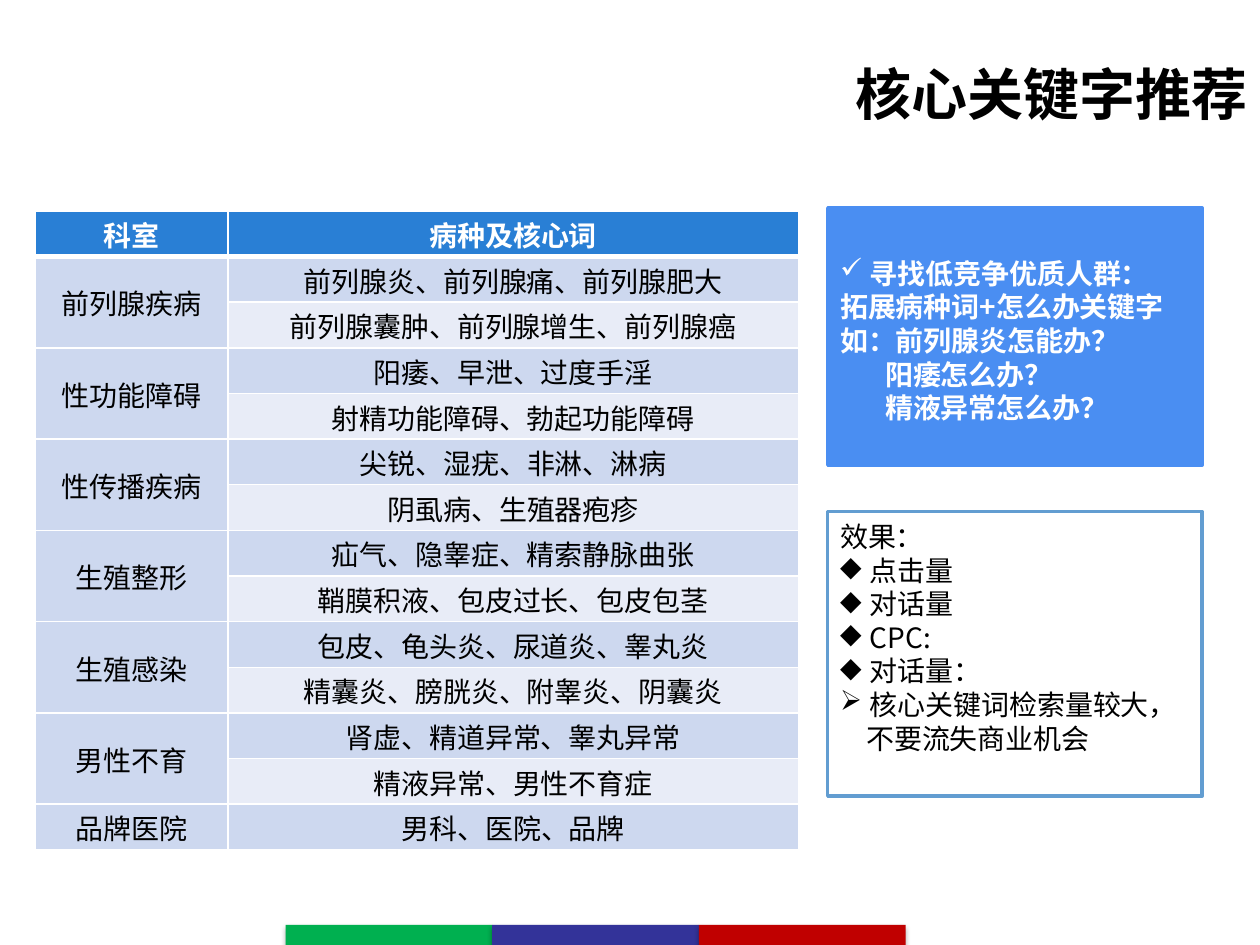
from dataclasses import dataclass

from lxml import etree
from pptx import Presentation
from pptx import util as u
from pptx.dml.color import RGBColor
from pptx.enum import shapes, text
from pptx.oxml import ns


@dataclass(frozen=True)
class Theme:
    font: str = "Noto Sans CJK SC"
    bullet_font: str = "OpenSymbol"
    title_size: float = 32
    body_size: float = 16
    line_pitch: float = 19.2
    black: str = "000000"
    white: str = "FFFFFF"
    header: str = "297FD5"
    band_dark: str = "CDD8EF"
    band_light: str = "E8ECF7"
    tip_fill: str = "4A8EF2"
    effect_line: str = "629DD1"
    stripes: tuple[str, ...] = ("00B050", "333399", "C00000")


@dataclass(frozen=True)
class Box:
    left: float
    top: float
    width: float
    height: float

    def lengths(self) -> list[u.Length]:
        return [u.Pt(value) for value in (self.left, self.top, self.width, self.height)]


@dataclass(frozen=True)
class Line:
    text: str
    bullet: str = ""
    indent: float = 0


@dataclass(frozen=True)
class Panel:
    box: Box
    fill: str
    outline: str
    color: str
    bold: bool
    anchor: text.MSO_ANCHOR
    top_inset: float
    lines: tuple[Line, ...]


@dataclass(frozen=True)
class Department:
    name: str
    keywords: tuple[str, ...]


THEME = Theme()
BULLET_INDENT = 17
TABLE_BOX = Box(20, 120.5, 436.4, 365.4)
COLUMN_WIDTHS = (110.2, 326.2)
HEADINGS = ("科室", "病种及核心词")
STRIPE = Box(163.2, 528.5, 118.1, 11.5)

DEPARTMENTS = (
    Department("前列腺疾病", ("前列腺炎、前列腺痛、前列腺肥大", "前列腺囊肿、前列腺增生、前列腺癌")),
    Department("性功能障碍", ("阳痿、早泄、过度手淫", "射精功能障碍、勃起功能障碍")),
    Department("性传播疾病", ("尖锐、湿疣、非淋、淋病", "阴虱病、生殖器疱疹")),
    Department("生殖整形", ("疝气、隐睾症、精索静脉曲张", "鞘膜积液、包皮过长、包皮包茎")),
    Department("生殖感染", ("包皮、龟头炎、尿道炎、睾丸炎", "精囊炎、膀胱炎、附睾炎、阴囊炎")),
    Department("男性不育", ("肾虚、精道异常、睾丸异常", "精液异常、男性不育症")),
    Department("品牌医院", ("男科、医院、品牌",)),
)

PANELS = (
    Panel(Box(473, 118.8, 214, 147), THEME.tip_fill, THEME.tip_fill, THEME.white, True,
          text.MSO_ANCHOR.MIDDLE, 8, (
              Line("寻找低竞争优质人群：", "✓", BULLET_INDENT),
              Line("拓展病种词+怎么办关键字"),
              Line("如：前列腺炎怎能办？"),
              Line("阳痿怎么办？", indent=25.7),
              Line("精液异常怎么办？", indent=25.7),
          )),
    Panel(Box(473, 292.4, 214, 162.6), THEME.white, THEME.effect_line, THEME.black, False,
          text.MSO_ANCHOR.TOP, 4.6, (
              Line("效果："),
              *(Line(metric, "◆", BULLET_INDENT) for metric in ("点击量", "对话量", "CPC:", "对话量：")),
              Line("核心关键词检索量较大，", "➢", BULLET_INDENT),
              Line("不要流失商业机会", indent=14.9),
          )),
)


def rgb(color: str) -> RGBColor:
    return RGBColor.from_string(color)


def add_element(parent, tag: str, **attributes):
    element = etree.SubElement(parent, ns.qn(tag))
    for name, value in attributes.items():
        element.set(name, str(value))
    return element


def format_runs(paragraph, size: float, color: str, bold: bool) -> None:
    for run in paragraph.runs:
        run.font.name = THEME.font
        run.font.size = u.Pt(size)
        run.font.bold = bold
        run.font.color.rgb = rgb(color)
        add_element(run.font._element, "a:ea", typeface=THEME.font)


def add_title(slide) -> None:
    shape = slide.shapes.add_textbox(*Box(99.4, 26, 620.6, 54).lengths())
    frame = shape.text_frame
    frame.word_wrap = True
    frame.vertical_anchor = text.MSO_ANCHOR.MIDDLE
    frame.text = "核心关键字推荐"
    paragraph = frame.paragraphs[0]
    paragraph.alignment = text.PP_ALIGN.RIGHT
    format_runs(paragraph, THEME.title_size, THEME.black, True)


def indent_paragraph(paragraph, line: Line) -> None:
    """Set the left indent and, for a bulleted line, the hanging bullet."""
    properties = paragraph._p.get_or_add_pPr()
    properties.set("marL", str(u.Pt(line.indent)))
    if line.bullet:
        properties.set("indent", str(-u.Pt(line.indent)))
        add_element(properties, "a:buFont", typeface=THEME.bullet_font)
        add_element(properties, "a:buChar", char=line.bullet)


def add_panel(slide, panel: Panel) -> None:
    shape = slide.shapes.add_shape(shapes.MSO_SHAPE.RECTANGLE, *panel.box.lengths())
    shape.shadow.inherit = False
    shape.fill.solid()
    shape.fill.fore_color.rgb = rgb(panel.fill)
    shape.line.color.rgb = rgb(panel.outline)
    shape.line.width = u.Pt(2)
    frame = shape.text_frame
    frame.word_wrap = True
    frame.vertical_anchor = panel.anchor
    frame.margin_top = u.Pt(panel.top_inset)
    frame.text = "\n".join(line.text for line in panel.lines)
    for paragraph, line in zip(frame.paragraphs, panel.lines):
        indent_paragraph(paragraph, line)
        paragraph.alignment = text.PP_ALIGN.LEFT
        paragraph.line_spacing = u.Pt(THEME.line_pitch)
        format_runs(paragraph, THEME.body_size, panel.color, panel.bold)


def set_borders(cell, bottom_width: float) -> None:
    properties = cell._tc.get_or_add_tcPr()
    widths = {"a:lnL": 1, "a:lnR": 1, "a:lnT": 1, "a:lnB": bottom_width}
    for position, (tag, width) in enumerate(widths.items()):
        border = add_element(properties, tag, w=u.Pt(width))
        add_element(add_element(border, "a:solidFill"), "a:srgbClr", val=THEME.white)
        properties.insert(position, border)


def fill_cell(cell, words: str, fill: str, header: bool = False) -> None:
    cell.fill.solid()
    cell.fill.fore_color.rgb = rgb(fill)
    set_borders(cell, 3 if header else 1)
    cell.vertical_anchor = text.MSO_ANCHOR.MIDDLE
    cell.margin_left = cell.margin_right = cell.margin_top = u.Pt(0.7)
    cell.margin_bottom = 0
    cell.text_frame.text = words
    paragraph = cell.text_frame.paragraphs[0]
    paragraph.alignment = text.PP_ALIGN.CENTER
    format_runs(paragraph, THEME.body_size, THEME.white if header else THEME.black, header)


def add_keyword_table(slide) -> None:
    row_count = 1 + sum(len(department.keywords) for department in DEPARTMENTS)
    table = slide.shapes.add_table(row_count, len(HEADINGS), *TABLE_BOX.lengths()).table
    for column, width in zip(table.columns, COLUMN_WIDTHS):
        column.width = u.Pt(width)
    for row in table.rows:
        row.height = u.Pt(TABLE_BOX.height / row_count)
    for column, heading in enumerate(HEADINGS):
        fill_cell(table.cell(0, column), heading, THEME.header, header=True)
    row = 1
    for department in DEPARTMENTS:
        last_row = row + len(department.keywords) - 1
        if last_row > row:
            table.cell(row, 0).merge(table.cell(last_row, 0))
        for offset, keywords in enumerate(department.keywords):
            fill_cell(table.cell(row + offset, 0), "" if offset else department.name, THEME.band_dark)
            fill_cell(table.cell(row + offset, 1), keywords,
                      THEME.band_light if offset else THEME.band_dark)
        row = last_row + 1


def add_footer_stripes(slide) -> None:
    group = slide.shapes.add_group_shape()
    for index, color in enumerate(THEME.stripes):
        box = Box(STRIPE.left + index * STRIPE.width, STRIPE.top, STRIPE.width, STRIPE.height)
        shape = group.shapes.add_shape(shapes.MSO_SHAPE.RECTANGLE, *box.lengths())
        shape.fill.solid()
        shape.fill.fore_color.rgb = rgb(color)
        shape.line.fill.background()
        shape.shadow.inherit = False
        effects = shape._element.spPr.find(ns.qn("a:effectLst"))
        shadow = add_element(effects, "a:outerShdw", blurRad=u.Pt(3.1), dist=u.Pt(1.8),
                             dir=90 * 60000, rotWithShape=0)
        add_element(add_element(shadow, "a:srgbClr", val=THEME.black), "a:alpha", val=35000)


def main() -> None:
    presentation = Presentation()
    presentation.slide_width, presentation.slide_height = u.Pt(720), u.Pt(540)
    slide = presentation.slides.add_slide(presentation.slide_layouts[6])
    add_title(slide)
    for panel in PANELS:
        add_panel(slide, panel)
    add_keyword_table(slide)
    add_footer_stripes(slide)
    presentation.save("out.pptx")


if __name__ == "__main__":
    main()
